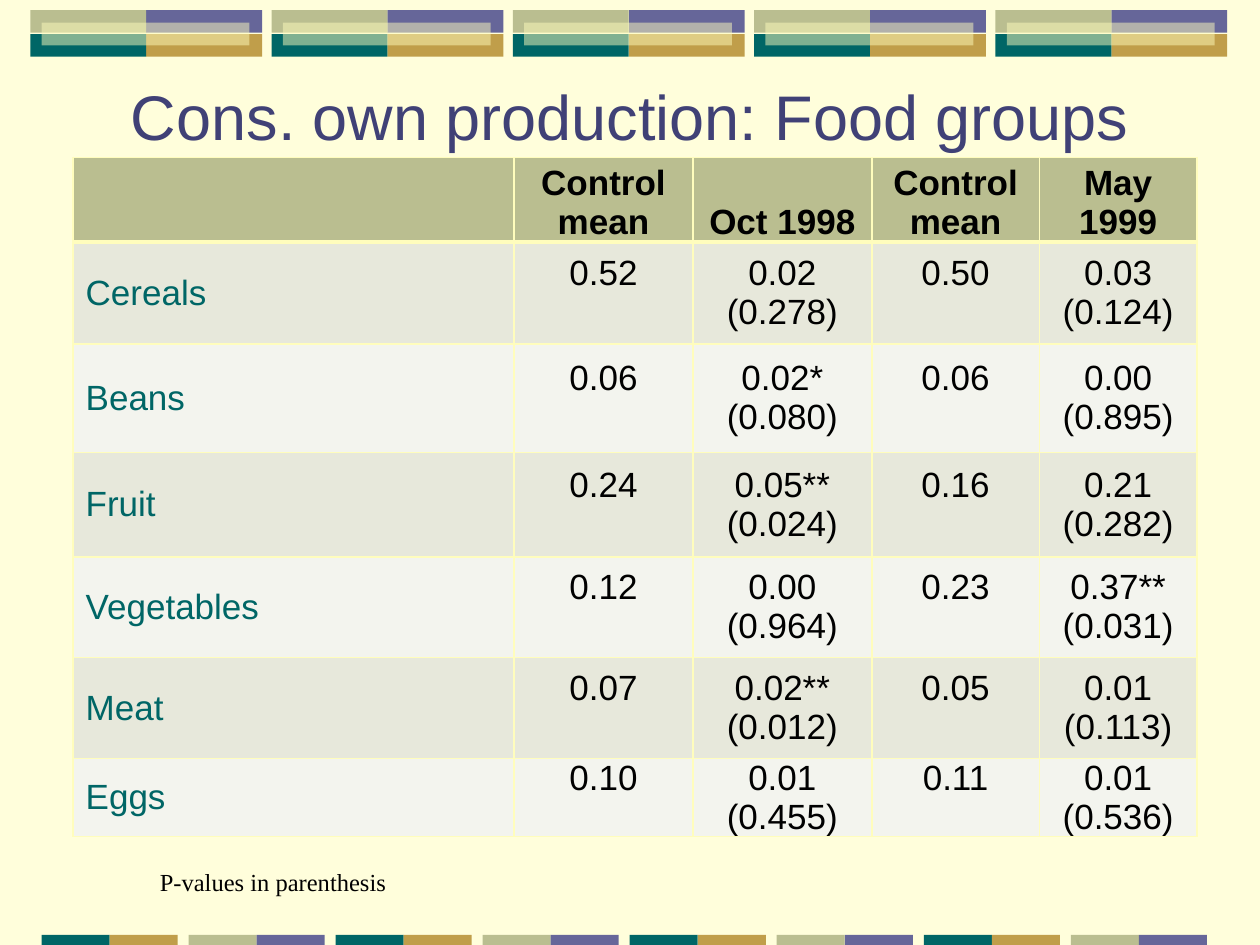
from dataclasses import dataclass

from lxml.etree import SubElement
from pptx import Presentation
from pptx.dml.color import RGBColor
from pptx.enum.shapes import MSO_SHAPE
from pptx.enum.text import MSO_ANCHOR, PP_ALIGN
from pptx.oxml.ns import qn
from pptx.util import Inches, Pt


@dataclass(frozen=True)
class Theme:
    paper: str = "FFFEDB"
    cream: str = "FFFDBD"
    olive: str = "BABE90"
    violet: str = "666699"
    teal: str = "006666"
    gold: str = "C09E4A"
    title: str = "404176"
    ink: str = "000000"
    bands: tuple = ("F3F4EE", "E7E8DB")
    sans: str = "Arial"
    serif: str = "Times New Roman"
    title_size: int = 36
    table_size: int = 20
    note_size: int = 14


theme = Theme()


def add_tile(left, top, width, height, color):
    tile = page.shapes.add_shape(
        MSO_SHAPE.RECTANGLE, Inches(left), Inches(top), Inches(width), Inches(height))
    tile.shadow.inherit = False
    tile.fill.solid()
    tile.fill.fore_color.rgb = RGBColor.from_string(color)
    tile.line.fill.background()
    return tile


def style_text(frame, font_name, size, color, align, bold=False):
    for para in frame.paragraphs:
        para.alignment = align
        for span in para.runs:
            span.font.name = font_name
            span.font.size = Pt(size)
            span.font.bold = bold
            span.font.color.rgb = RGBColor.from_string(color)


deck = Presentation()
deck.slide_width, deck.slide_height = Inches(10), Inches(7.5)
page = deck.slides.add_slide(deck.slide_layouts[5])
page.background.fill.solid()
page.background.fill.fore_color.rgb = RGBColor.from_string(theme.paper)

# Top band: five blocks of four tiles under a translucent bar
tile_width, tile_height = 0.92, 0.18
for block in range(5):
    left, top = 0.24 + block * 1.915, 0.08
    for column, row, color in ((1, 0, theme.violet), (1, 1, theme.gold),
                               (0, 1, theme.teal), (0, 0, theme.olive)):
        add_tile(left + column * tile_width, top + row * 0.19,
                 tile_width, tile_height, color)
    bar = add_tile(left + 0.09, top + 0.1, 1.65, tile_height, theme.cream)
    tint = bar.fill._xPr.find(qn("a:solidFill"))[0]
    SubElement(tint, qn("a:alpha")).set("val", "50000")

# Bottom band: eight pairs in alternating colours
pairs = ((theme.teal, theme.gold), (theme.olive, theme.violet))
for pair in range(8):
    for half, color in enumerate(pairs[pair % 2]):
        add_tile(0.33 + pair * 1.167 + half * 0.54, 7.42, 0.54, 0.08, color)

# Title
title = page.shapes.title
title.left, title.top = Inches(0.25), Inches(0.5)
title.width, title.height = Inches(9.5), Inches(0.83)
title.text_frame.text = "Cons. own production: Food groups"
title.text_frame.vertical_anchor = MSO_ANCHOR.MIDDLE
style_text(title.text_frame, theme.sans, theme.title_size, theme.title, PP_ALIGN.CENTER)

# Table of food groups
rows = (
    ("", "Control mean", "Oct 1998", "Control mean", "May 1999"),
    ("Cereals", "0.52", "0.02\n(0.278)", "0.50", "0.03\n(0.124)"),
    ("Beans", "0.06", "0.02*\n(0.080)", "0.06", "0.00\n(0.895)"),
    ("Fruit", "0.24", "0.05**\n(0.024)", "0.16", "0.21\n(0.282)"),
    ("Vegetables", "0.12", "0.00\n(0.964)", "0.23", "0.37**\n(0.031)"),
    ("Meat", "0.07", "0.02**\n(0.012)", "0.05", "0.01\n(0.113)"),
    ("Eggs", "0.10", "0.01\n(0.455)", "0.11", "0.01\n(0.536)"),
)
column_widths = (3.5, 1.42, 1.42, 1.33, 1.25)
row_heights = (0.67, 0.81, 0.86, 0.83, 0.8, 0.8, 0.6)
line_height = 0.31
table = page.shapes.add_table(
    len(rows), len(column_widths), Inches(0.58), Inches(1.25),
    Inches(sum(column_widths)), Inches(sum(row_heights))).table
for column, width in zip(table.columns, column_widths):
    column.width = Inches(width)
for row, height in zip(table.rows, row_heights):
    row.height = Inches(height)

for r, texts in enumerate(rows):
    header = r == 0
    for c, text in enumerate(texts):
        cell = table.cell(r, c)
        label = c == 0
        cell.text_frame.text = text
        cell.vertical_anchor = MSO_ANCHOR.BOTTOM if header else MSO_ANCHOR.MIDDLE
        if not label:
            cell.margin_left = cell.margin_right = Inches(0.07)
            cell.margin_top = 0
            # A single value lines up with the first line of its neighbours
            single = not header and "\n" not in text
            cell.margin_bottom = Inches(line_height if single else 0)
        style_text(cell.text_frame, theme.sans, theme.table_size,
                   theme.teal if label else theme.ink,
                   PP_ALIGN.LEFT if label else PP_ALIGN.CENTER, header)

        # Borders, heavier around the header's lower edge
        properties = cell._tc.get_or_add_tcPr()
        for side in ("lnL", "lnR", "lnT", "lnB"):
            heavy = (header and side == "lnB") or (r == 1 and side == "lnT")
            border = SubElement(properties, qn(f"a:{side}"), w=str(Pt(3 if heavy else 1)))
            paint = SubElement(border, qn("a:solidFill"))
            SubElement(paint, qn("a:srgbClr"), val=theme.cream)
        cell.fill.solid()
        cell.fill.fore_color.rgb = RGBColor.from_string(
            theme.olive if header else theme.bands[r % 2])

# Note
note = page.shapes.add_textbox(Inches(1.17), Inches(6.83), Inches(2.42), Inches(0.34))
note.text_frame.word_wrap = True
note.text_frame.text = "P-values in parenthesis"
style_text(note.text_frame, theme.serif, theme.note_size, theme.ink, PP_ALIGN.LEFT)

deck.save("out.pptx")
